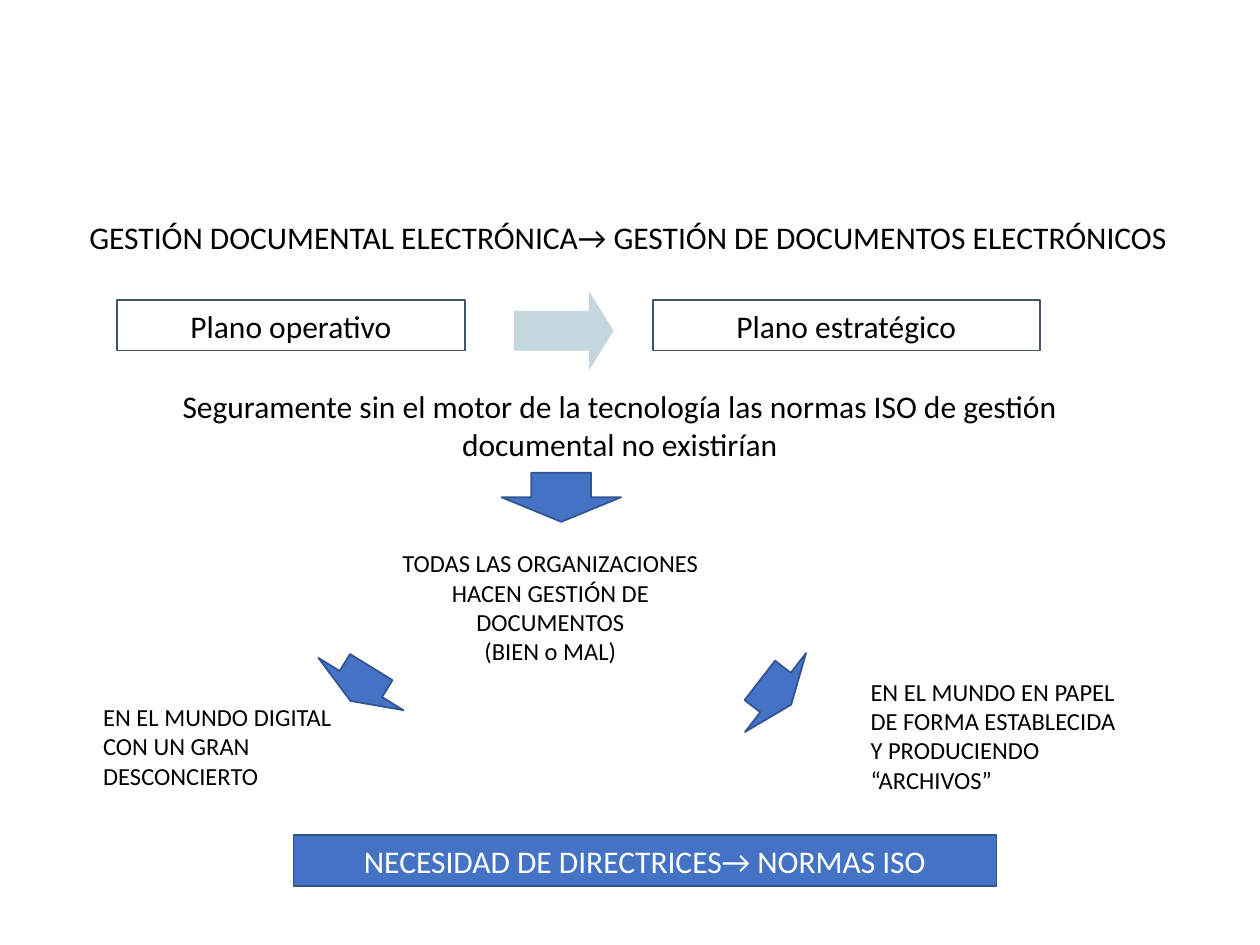
from dataclasses import dataclass

from pptx import Presentation
from pptx.dml.color import RGBColor
from pptx.enum.shapes import MSO_SHAPE as Shape
from pptx.enum.text import MSO_ANCHOR as Anchor, MSO_AUTO_SIZE as AutoSize, PP_ALIGN as Align
from pptx.util import Cm, Pt


@dataclass(frozen=True)
class Theme:
    font: str = "Calibri"
    heading: int = 18
    body: int = 14
    line_width: int = 1
    ink: RGBColor = RGBColor.from_string("000000")
    paper: RGBColor = RGBColor.from_string("FFFFFF")
    frame: RGBColor = RGBColor.from_string("44546A")
    accent: RGBColor = RGBColor.from_string("4472C4")
    accent_edge: RGBColor = RGBColor.from_string("325491")
    pale: RGBColor = RGBColor.from_string("C4D7DE")


THEME = Theme()


def write(box, text, size=THEME.heading, color=THEME.ink, align=Align.LEFT, anchor=Anchor.TOP):
    """Fill a box with one paragraph per line of text."""
    frame = box.text_frame
    frame.word_wrap = True
    frame.auto_size = AutoSize.SHAPE_TO_FIT_TEXT
    frame.vertical_anchor = anchor
    frame.margin_left = frame.margin_right = Cm(0.25)
    frame.margin_top = frame.margin_bottom = Cm(0.13)
    for index, line in enumerate(text.split("\n")):
        para = frame.paragraphs[0] if index == 0 else frame.add_paragraph()
        para.alignment = align
        span = para.add_run()
        span.text = line
        span.font.name = THEME.font
        span.font.size = Pt(size)
        span.font.color.rgb = color


def add_title(page, text, left, top, width, height):
    title = page.shapes.title
    title.left, title.top, title.width, title.height = map(Cm, (left, top, width, height))
    write(title, text)


def add_text(page, text, left, top, width, height, **style):
    box = page.shapes.add_textbox(*map(Cm, (left, top, width, height)))
    write(box, text, **style)


def add_figure(page, kind, left, top, width, height, fill=None, line=None, rotation=0):
    figure = page.shapes.add_shape(kind, *map(Cm, (left, top, width, height)))
    figure.shadow.inherit = False
    figure.rotation = rotation
    if fill is None:
        figure.fill.background()
    else:
        figure.fill.solid()
        figure.fill.fore_color.rgb = fill
    if line is None:
        figure.line.fill.background()
    else:
        figure.line.color.rgb = line
        figure.line.width = Pt(THEME.line_width)
    return figure


def add_label(page, text, left, top, width, fill=None, line=THEME.frame, color=THEME.ink):
    label = add_figure(page, Shape.RECTANGLE, left, top, width, 1.02, fill, line)
    write(label, text, color=color, align=Align.CENTER)


def add_down_arrow(page, left, top, width, height, rotation=0):
    add_figure(page, Shape.DOWN_ARROW, left, top, width, height,
               THEME.accent, THEME.accent_edge, rotation)


def main():
    deck = Presentation()
    deck.slide_width, deck.slide_height = Cm(25.4), Cm(19.05)
    page = deck.slides.add_slide(deck.slide_layouts[5])

    add_title(page, "GESTIÓN DOCUMENTAL ELECTRÓNICA→ GESTIÓN DE DOCUMENTOS ELECTRÓNICOS",
              1.55, 4.27, 22.58, 1.02)

    add_label(page, "Plano operativo", 2.36, 6.05, 7.01)
    add_label(page, "Plano estratégico", 13.16, 6.05, 7.8)
    step = add_figure(page, Shape.RIGHT_ARROW, 10.36, 5.87, 2.01, 1.6, THEME.pale)
    step.adjustments[1] = 0.31

    add_text(page, "Seguramente sin el motor de la tecnología las normas ISO de gestión "
             "documental no existirían", 2.92, 7.67, 19.15, 1.8, align=Align.CENTER)
    add_down_arrow(page, 10.11, 9.53, 2.41, 0.99)
    add_text(page, "TODAS LAS ORGANIZACIONES HACEN GESTIÓN DE DOCUMENTOS\n(BIEN o MAL)",
             7.49, 10.92, 7.21, 2.64, size=THEME.body, align=Align.CENTER)

    add_down_arrow(page, 14.63, 13.56, 2.01, 0.8, rotation=307.7)
    add_text(page, "EN EL MUNDO EN PAPEL DE FORMA ESTABLECIDA Y PRODUCIENDO “ARCHIVOS”",
             17.3, 13.51, 5.79, 2.64, size=THEME.body)
    add_down_arrow(page, 6.27, 13.39, 2.01, 0.8, rotation=31.6)
    add_text(page, "EN EL MUNDO DIGITAL CON UN GRAN DESCONCIERTO",
             1.83, 14.02, 5.79, 2.06, size=THEME.body)

    add_label(page, "NECESIDAD DE DIRECTRICES→ NORMAS ISO", 5.92, 16.84, 14.17,
              fill=THEME.accent, line=THEME.accent_edge, color=THEME.paper)
    deck.save("out.pptx")


if __name__ == "__main__":
    main()
